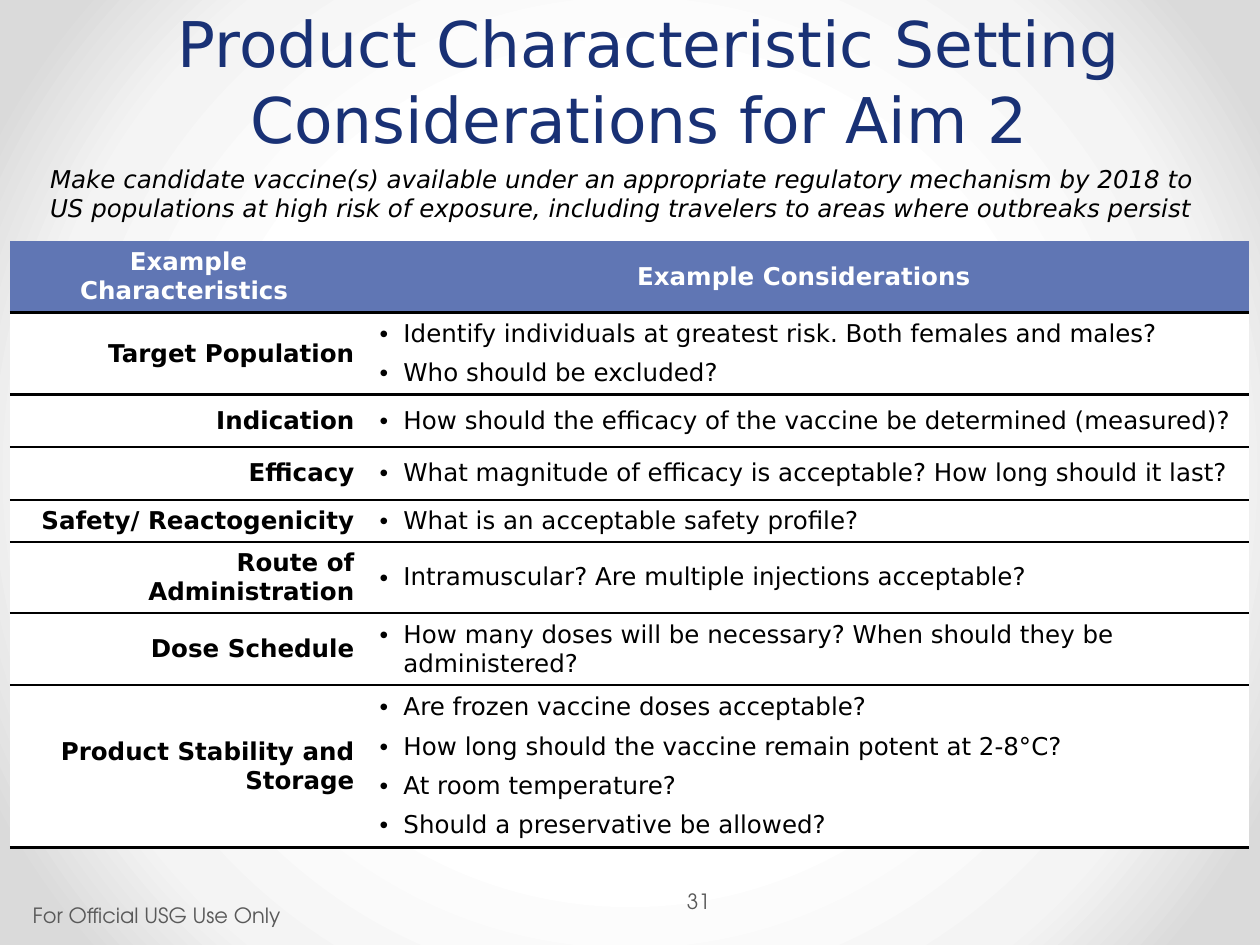
from lxml.etree import SubElement, fromstring
from pptx import Presentation
from pptx.dml.color import RGBColor
from pptx.enum.text import MSO_ANCHOR, MSO_AUTO_SIZE, PP_ALIGN
from pptx.oxml.ns import nsdecls, qn
from pptx.util import Cm, Pt

COLORS = {"navy": "193175", "blue": "6076B4", "white": "FFFFFF",
          "black": "000000", "gray": "595959"}
GLOW = [(50, "FFFFFF"), (76, "F4F4F4"), (92, "DADADA")]
PLAIN = "{2D5ABB26-0587-4C30-8999-92F81FD0307C}"
HEADS = ["Example Characteristics ", "Example Considerations "]
ROWS = [
    ("Target Population", 1.65, [
        "Identify individuals at greatest risk. Both females and males?",
        "Who should be excluded?"]),
    ("Indication", 1.06, [
        "How should the efficacy of the vaccine be determined (measured)?"]),
    ("Efficacy", 1.06, [
        "What magnitude of efficacy is acceptable? How long should it last?"]),
    ("Safety/ Reactogenicity", 0.84, ["What is an acceptable safety profile?"]),
    ("Route of Administration", 0.84, [
        "Intramuscular? Are multiple injections acceptable?"]),
    ("Dose Schedule", 1.45, [
        "How many doses will be necessary? When should they be administered?"]),
    ("Product Stability and Storage", 3.27, [
        "Are frozen vaccine doses acceptable?",
        "How long should the vaccine remain potent at 2-8°C?",
        "At room temperature?",
        "Should a preservative be allowed?"]),
]


class Deck:
    sans = "DejaVu Sans"
    foot = "TeX Gyre Adventor"

    def __init__(self):
        self.prs = Presentation()
        self.prs.slide_width, self.prs.slide_height = Cm(25.4), Cm(19.05)
        self.slide = self.prs.slides.add_slide(self.prs.slide_layouts[5])

    def style(self, para, size, color, face=sans, bold=False, italic=False):
        font = para.font
        font.name, font.size = face, Pt(size)
        font.bold, font.italic = bold, italic
        font.color.rgb = RGBColor.from_string(COLORS[color])

    def backdrop(self, stops):
        marks = "".join(f'<a:gs pos="{pos * 1000}"><a:srgbClr val="{color}"/></a:gs>'
                        for pos, color in stops)
        self.slide.background.fill.solid()
        solid = self.slide.element.find(".//" + qn("p:bgPr"))[0]
        solid.getparent().replace(solid, fromstring(
            f'<a:gradFill {nsdecls("a")} rotWithShape="1"><a:gsLst>{marks}</a:gsLst>'
            '<a:path path="circle"><a:fillToRect l="50000" t="50000" '
            'r="50000" b="50000"/></a:path></a:gradFill>'))

    def title(self, text, box):
        shape = self.slide.shapes.title
        shape.left, shape.top, shape.width, shape.height = map(Cm, box)
        frame = shape.text_frame
        frame.text = text
        frame.word_wrap, frame.auto_size = True, MSO_AUTO_SIZE.NONE
        frame.vertical_anchor = MSO_ANCHOR.TOP
        frame.margin_left = frame.margin_right = 0
        frame.margin_top = frame.margin_bottom = 0
        para = frame.paragraphs[0]
        para.alignment, para.line_spacing = PP_ALIGN.CENTER, 1.0
        self.style(para, 36, "navy")

    def text(self, text, box, size, color, face=sans, italic=False,
             anchor=MSO_ANCHOR.TOP, inset=0.25):
        frame = self.slide.shapes.add_textbox(*map(Cm, box)).text_frame
        frame.word_wrap, frame.vertical_anchor = True, anchor
        frame.margin_left = Cm(inset)
        frame.text = text
        self.style(frame.paragraphs[0], size, color, face, italic=italic)

    def cell(self, cell, lines, fill, color, align, bold=True, bullet=False):
        cell.fill.solid()
        cell.fill.fore_color.rgb = RGBColor.from_string(COLORS[fill])
        cell.vertical_anchor = MSO_ANCHOR.MIDDLE
        cell._tc.get_or_add_tcPr().insert(0, fromstring(
            f'<a:lnB {nsdecls("a")} w="19050"><a:solidFill>'
            f'<a:srgbClr val="{COLORS["black"]}"/></a:solidFill></a:lnB>'))
        cell.text = "\n".join(lines)
        for num, para in enumerate(cell.text_frame.paragraphs):
            para.alignment = align
            if bullet:
                props = para._p.get_or_add_pPr()
                props.set("marL", str(Cm(0.48)))
                props.set("indent", str(-Cm(0.48)))
                SubElement(props, qn("a:buFont")).set("typeface", "Arial")
                SubElement(props, qn("a:buChar")).set("char", "•")
                para.space_before = Pt(3 if num else 0)
                para.space_after = Pt(3)
            self.style(para, 14, color, bold=bold)

    def table(self, heads, rows, box, widths, top):
        shape = self.slide.shapes.add_table(len(rows) + 1, len(heads), *map(Cm, box))
        table = shape.table
        table._tbl.tblPr.find(qn("a:tableStyleId")).text = PLAIN
        table.horz_banding = False
        for col, width in zip(table.columns, widths):
            col.width = Cm(width)
        table.rows[0].height = Cm(top)
        for col, head in enumerate(heads):
            self.cell(table.cell(0, col), [head], "blue", "white", PP_ALIGN.CENTER)
        for row, (name, height, notes) in enumerate(rows, 1):
            table.rows[row].height = Cm(height)
            self.cell(table.cell(row, 0), [name], "white", "black", PP_ALIGN.RIGHT)
            self.cell(table.cell(row, 1), notes, "white", "black", PP_ALIGN.LEFT,
                      bold=False, bullet=True)

    def save(self):
        self.prs.save("out.pptx")


def main():
    deck = Deck()
    deck.backdrop(GLOW)
    deck.title("Product Characteristic Setting Considerations for Aim 2 ",
               (1.04, 0.1, 24.1, 3.08))
    deck.text("Make candidate vaccine(s) available under an appropriate regulatory "
              "mechanism by 2018 to US populations at high risk of exposure, including "
              "travelers to areas where outbreaks persist",
              (0.76, 3.18, 24.03, 1.45), 14, "black", italic=True)
    deck.table(HEADS, ROWS, (0.2, 4.85, 25, 11.62), (7.2, 17.78), 1.45)
    for text, box, inset in [
            ("For Official USG Use Only", (0.53, 17.93, 8.59, 1.02), 0.13),
            ("31", (13.77, 17.65, 5.72, 1.02), 0.08)]:
        deck.text(text, box, 12, "gray", deck.foot,
                  anchor=MSO_ANCHOR.MIDDLE, inset=inset)
    deck.save()


if __name__ == "__main__":
    main()
